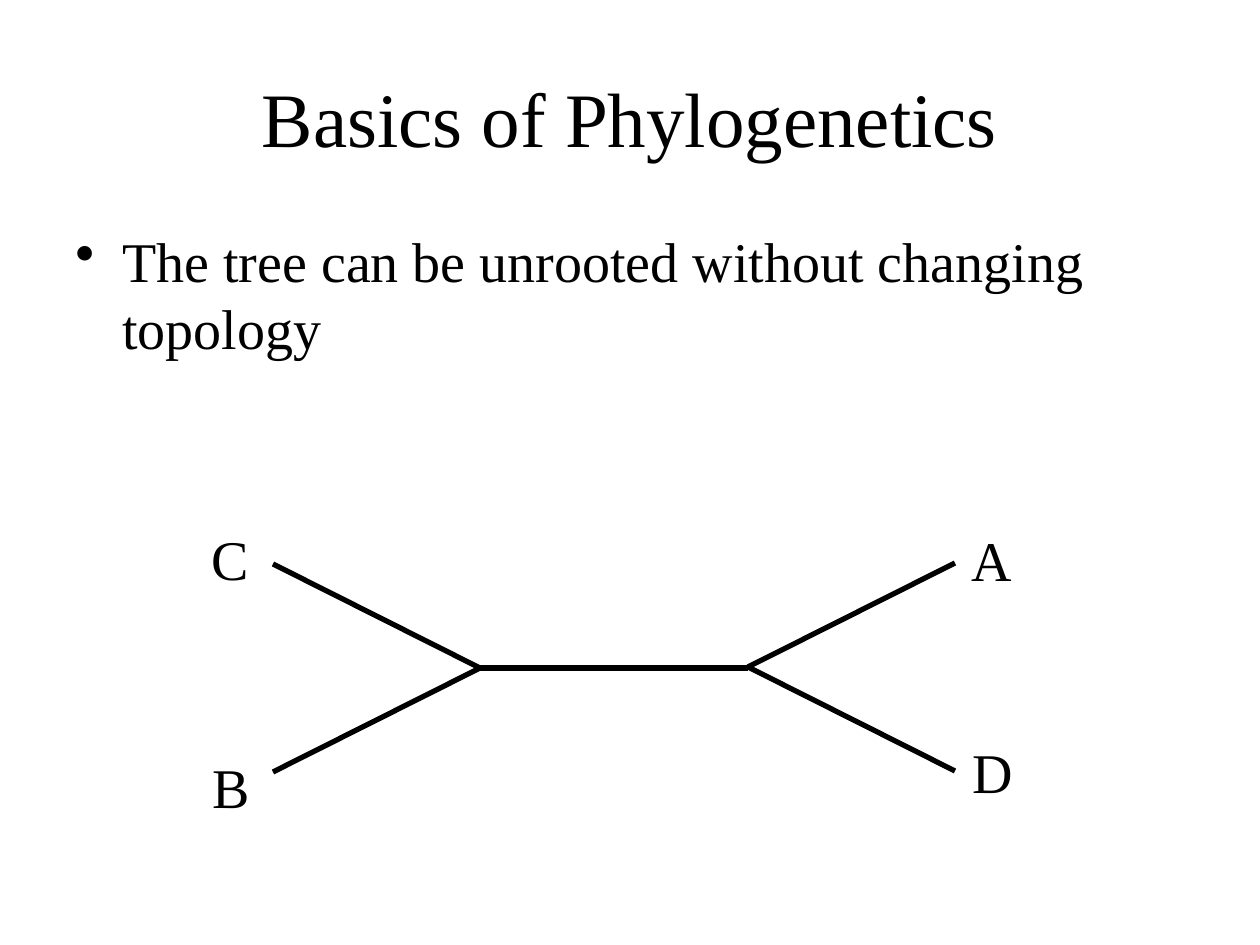
from dataclasses import dataclass
from typing import Any

from lxml.etree import SubElement
from pptx import Presentation
from pptx.dml.color import RGBColor
from pptx.enum.shapes import MSO_CONNECTOR as Connector
from pptx.enum.text import MSO_ANCHOR as Anchor, MSO_AUTO_SIZE as AutoSize, PP_ALIGN as Align
from pptx.oxml.ns import qn
from pptx.util import Emu, Pt

COLORS = {"ink": "000000", "paper": "FFFFFF"}


def px(length):
    return Emu(round(length * 914400 / 126))


@dataclass
class PhyloSlide:
    """Draw styled text and tree branches on one slide."""

    slide: Any
    font: str = "Times New Roman"
    ink: str = COLORS["ink"]
    body_size: int = 32
    branch_width: int = 3

    def background(self, color):
        fill = self.slide.background.fill
        fill.solid()
        fill.fore_color.rgb = RGBColor.from_string(color)

    def text(self, wording, box, size=None, wrap=True, anchor=Anchor.TOP, align=Align.LEFT):
        frame = self.slide.shapes.add_textbox(*map(px, box)).text_frame
        frame.word_wrap = wrap
        frame.auto_size = AutoSize.NONE if wrap else AutoSize.SHAPE_TO_FIT_TEXT
        frame.vertical_anchor = anchor
        paragraph = frame.paragraphs[0]
        paragraph.alignment = align
        run = paragraph.add_run()
        run.text = wording
        run.font.name = self.font
        run.font.size = Pt(size or self.body_size)
        run.font.color.rgb = RGBColor.from_string(self.ink)
        return paragraph

    def bullet(self, wording, box, indent=47):
        paragraph = self.text(wording, box)
        paragraph.space_before = Pt(0.2 * self.body_size)
        properties = paragraph._p.get_or_add_pPr()
        properties.set("marL", str(px(indent)))
        properties.set("indent", str(px(-indent)))
        SubElement(properties, qn("a:buChar")).set("char", "•")

    def tree(self, branches):
        group = self.slide.shapes.add_group_shape()
        for start, end in branches:
            branch = group.shapes.add_connector(Connector.STRAIGHT, *map(px, start + end))
            branch.line.color.rgb = RGBColor.from_string(self.ink)
            branch.line.width = Pt(self.branch_width)
            SubElement(branch._element.spPr, qn("a:effectLst"))

    def taxon(self, letter, box):
        self.text(letter, box, wrap=False)


def main():
    deck = Presentation()
    deck.slide_width, deck.slide_height = px(1260), px(945)
    page = PhyloSlide(deck.slides.add_slide(deck.slide_layouts[6]))
    page.background(COLORS["paper"])
    page.text("Basics of Phylogenetics", (63, 38, 1134, 157), size=44,
              anchor=Anchor.MIDDLE, align=Align.CENTER)
    page.bullet("The tree can be unrooted without changing topology", (63, 220, 1134, 624))

    left_node, right_node = (480, 668), (748, 667)
    tips = {"C": (273, 564), "B": (273, 772), "D": (955, 771), "A": (955, 563)}
    page.tree([
        (left_node, (748, 668)),
        (left_node, tips["C"]),
        (tips["B"], left_node),
        (tips["D"], right_node),
        (tips["A"], right_node),
    ])
    for letter, left, top, width in (
        ("A", 959, 519, 64), ("C", 199, 518, 62), ("B", 200, 746, 60), ("D", 960, 731, 69),
    ):
        page.taxon(letter, (left, top, width, 81))
    deck.save("out.pptx")


if __name__ == "__main__":
    main()
